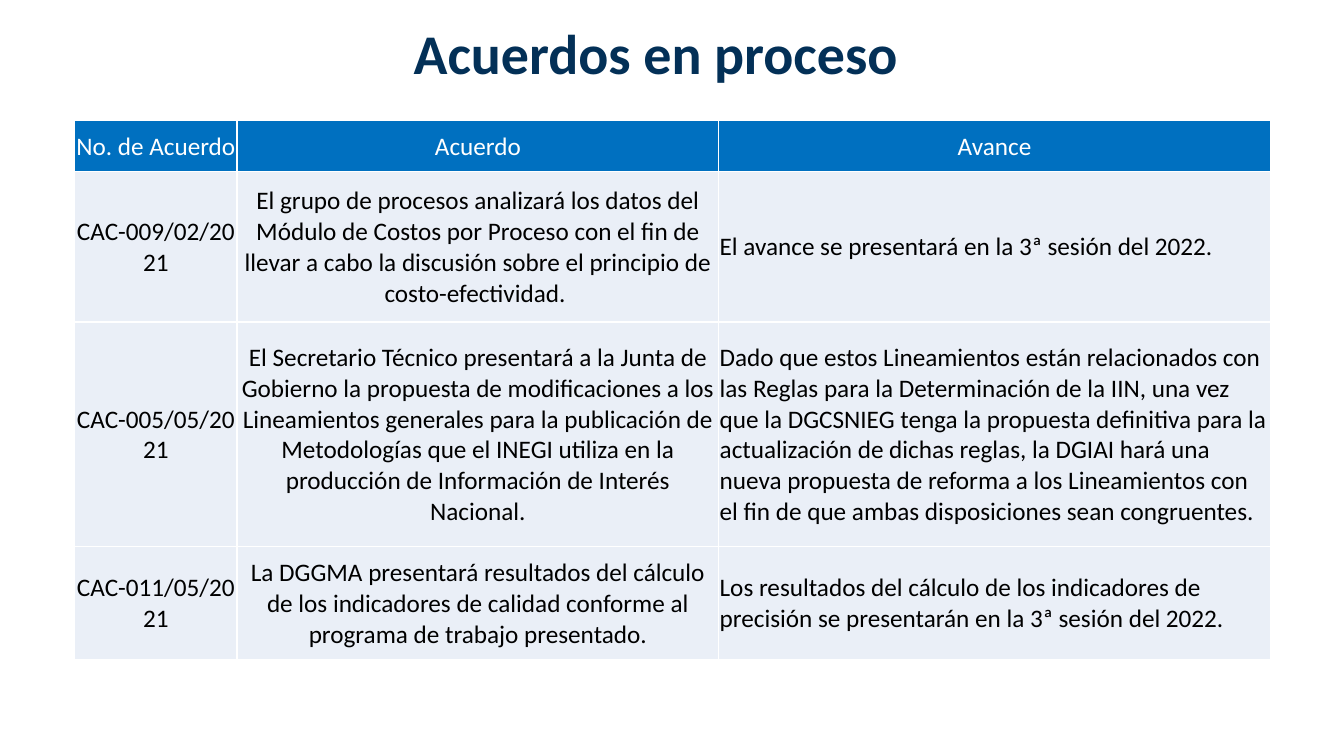
"""Build the slide of agreements in progress."""
import pptx
import pptx.util
import pptx.dml.color
import pptx.enum.text
import pptx.oxml

Pt = pptx.util.Pt
Align = pptx.enum.text.PP_ALIGN
Anchor = pptx.enum.text.MSO_ANCHOR

TITLE = "Acuerdos en proceso "
HEADS = ("No. de Acuerdo", "Acuerdo", "Avance")
ITEMS = [
    ("CAC-009/02/2021",
     "El grupo de procesos analizará los datos del Módulo de Costos por Proceso con el fin de "
     "llevar a cabo la discusión sobre el principio de costo-efectividad. ",
     "El avance se presentará en la 3ª sesión del 2022."),
    ("CAC-005/05/2021",
     "El Secretario Técnico presentará a la Junta de Gobierno la propuesta de modificaciones a "
     "los Lineamientos generales para la publicación de Metodologías que el INEGI utiliza en la "
     "producción de Información de Interés Nacional.",
     "Dado que estos Lineamientos están relacionados con las Reglas para la Determinación de la "
     "IIN, una vez que la DGCSNIEG tenga la propuesta definitiva para la actualización de dichas "
     "reglas, la DGIAI hará una nueva propuesta de reforma a los Lineamientos con el fin de que "
     "ambas disposiciones sean congruentes."),
    ("CAC-011/05/2021",
     "La DGGMA presentará resultados del cálculo de los indicadores de calidad conforme al "
     "programa de trabajo presentado.",
     "Los resultados del cálculo de los indicadores de precisión se presentarán en la 3ª sesión "
     "del 2022."),
]
WIDTHS = (115.9, 344.2, 393.8)
HEIGHTS = (36.7, 107.3, 160.6, 80.6)
THEME = {
    "font": "Calibri", "title": 40, "body": 18, "navy": "033057", "blue": "0070C0",
    "pale": "EAEFF7", "white": "FFFFFF", "black": "000000",
}


def tint(name):
    return pptx.dml.color.RGBColor.from_string(THEME[name])


def write(frame, text, size="body", color="black", bold=False, align=Align.CENTER, space=None):
    frame.word_wrap = True
    line = frame.paragraphs[0]
    line.alignment = align
    line.line_spacing = space
    run = line.add_run()
    run.text = text
    font = run.font
    font.name, font.size, font.bold = THEME["font"], Pt(THEME[size]), bold
    font.color.rgb = tint(color)


def edge(cell):
    props = cell._tc.get_or_add_tcPr()
    for spot, side in enumerate("LRTB"):
        props.insert(spot, pptx.oxml.parse_xml(
            f'<a:ln{side} xmlns:a="http://schemas.openxmlformats.org/drawingml/2006/main" '
            f'w="{Pt(1)}"><a:solidFill><a:srgbClr val="{THEME["white"]}"/></a:solidFill>'
            f'</a:ln{side}>'))


def main():
    deck = pptx.Presentation()
    deck.slide_width, deck.slide_height = Pt(960), Pt(540)
    slide = deck.slides.add_slide(deck.slide_layouts[6])

    title = slide.shapes.add_textbox(Pt(-7.2), Pt(15.1), Pt(960), Pt(45.4))
    write(title.text_frame, TITLE, size="title", color="navy", bold=True, space=0.9)

    rows = [HEADS, *ITEMS]
    grid = slide.shapes.add_table(len(rows), len(HEADS), Pt(53.4), Pt(86),
                                  Pt(sum(WIDTHS)), Pt(sum(HEIGHTS))).table
    for col, width in zip(grid.columns, WIDTHS):
        col.width = Pt(width)
    for row, height in zip(grid.rows, HEIGHTS):
        row.height = Pt(height)

    for r, row in enumerate(rows):
        for c, text in enumerate(row):
            cell = grid.cell(r, c)
            cell.margin_left = cell.margin_right = cell.margin_top = Pt(0.6)
            cell.margin_bottom = 0
            cell.vertical_anchor = Anchor.MIDDLE
            cell.fill.solid()
            cell.fill.fore_color.rgb = tint("pale" if r else "blue")
            edge(cell)
            write(cell.text_frame, text, color="black" if r else "white",
                  align=Align.LEFT if r and c == 2 else Align.CENTER)

    deck.save("out.pptx")


if __name__ == "__main__":
    main()
